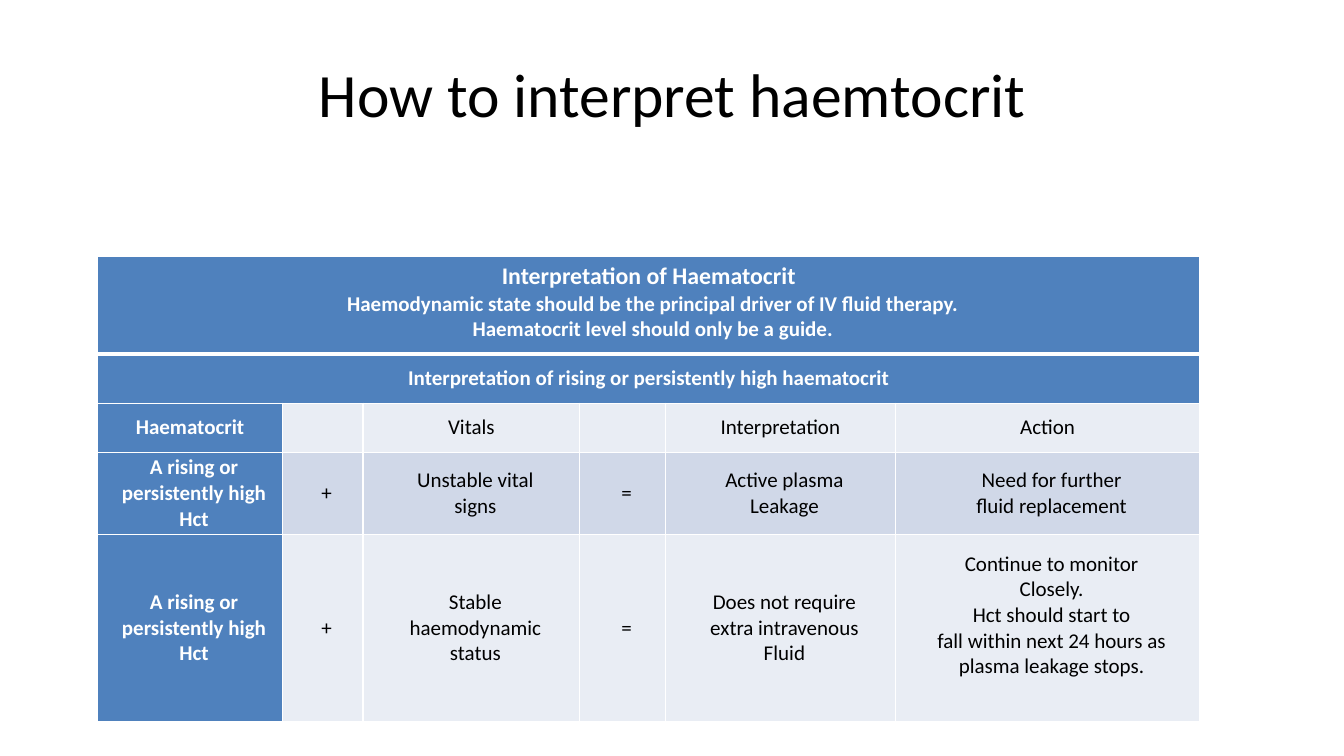
from lxml import etree
from pptx import Presentation
from pptx import util as u
from pptx.dml.color import RGBColor
from pptx.enum import text
from pptx.oxml.ns import qn

COLORS = {
    "white": "FFFFFF",
    "black": "000000",
    "blue": "4F81BD",
    "pale": "E9EDF4",
    "band": "D0D8E8",
}
COLUMN_WIDTHS = [1.83, 0.8, 2.15, 0.85, 2.28, 3.02]
ROW_HEIGHTS = [0.97, 0.49, 0.49, 0.81, 1.86]
BANNER_LINES = [
    "Interpretation of Haematocrit",
    "Haemodynamic state should be the principal driver of IV fluid therapy.",
    "Haematocrit level should only be a guide.",
]
SECTION_LINE = "Interpretation of rising or persistently high haematocrit"
RISING_HCT = ["A rising or", "persistently high Hct"]
BODY_ROWS = [
    [["Haematocrit"], [], ["Vitals"], [], ["Interpretation"], ["Action"]],
    [RISING_HCT, ["+"], ["Unstable vital", "signs"], ["="],
     ["Active plasma", "Leakage"], ["Need for further", "fluid replacement"]],
    [RISING_HCT, ["+"], ["Stable", "haemodynamic", "status"], ["="],
     ["Does not require", "extra intravenous", "Fluid"],
     ["Continue to monitor", "Closely.", "Hct should start to",
      "fall within next 24 hours as plasma leakage stops."]],
]
BANNER_FORMAT = {
    "margin_left": u.Inches(0.11), "margin_right": u.Inches(0.11),
    "margin_top": u.Inches(0.06), "margin_bottom": u.Inches(0.06),
}
BODY_FORMAT = {
    "margin_left": u.Inches(0.12), "margin_right": u.Inches(0.12),
    "margin_top": 0, "margin_bottom": 0,
    "vertical_anchor": text.MSO_ANCHOR.MIDDLE,
}


def apply_format(target, values):
    for name, value in values.items():
        setattr(target, name, value)


def write_line(paragraph, line, size, color, bold=False, indent=0):
    paragraph.alignment = text.PP_ALIGN.CENTER
    properties = paragraph._p.get_or_add_pPr()
    properties.set("marL", str(u.Inches(indent)))
    properties.set("indent", "0")
    run = paragraph.add_run()
    run.text = line
    apply_format(run.font, {"name": "Calibri", "size": u.Pt(size), "bold": bold})
    run.font.color.rgb = RGBColor.from_string(COLORS[color])


def write_cell(cell, lines, sizes, color, bold, indents):
    for index, (line, size, indent) in enumerate(zip(lines, sizes, indents)):
        frame = cell.text_frame
        paragraph = frame.add_paragraph() if index else frame.paragraphs[0]
        write_line(paragraph, line, size, color, bold, indent)


def style_cell(cell, fill, top=1, bottom=1):
    cell.fill.solid()
    cell.fill.fore_color.rgb = RGBColor.from_string(COLORS[fill])
    properties = cell._tc.get_or_add_tcPr()
    edges = {"a:lnL": 1, "a:lnR": 1, "a:lnT": top, "a:lnB": bottom}
    for position, (edge, width) in enumerate(edges.items()):
        border = etree.Element(qn(edge), w=str(u.Pt(width)))
        solid = etree.SubElement(border, qn("a:solidFill"))
        etree.SubElement(solid, qn("a:srgbClr"), val=COLORS["white"])
        properties.insert(position, border)


def add_title(slide, wording):
    title = slide.shapes.title
    apply_format(title, {
        "left": u.Inches(0.67), "top": u.Inches(0.3),
        "width": u.Inches(12), "height": u.Inches(1.25),
    })
    title.text_frame.vertical_anchor = text.MSO_ANCHOR.MIDDLE
    write_line(title.text_frame.paragraphs[0], wording, 44, "black")


def add_grid(slide):
    grid = slide.shapes.add_table(
        len(ROW_HEIGHTS), len(COLUMN_WIDTHS), u.Inches(0.97), u.Inches(2.54),
        u.Inches(sum(COLUMN_WIDTHS)), u.Inches(sum(ROW_HEIGHTS))).table
    for column, width in zip(grid.columns, COLUMN_WIDTHS):
        column.width = u.Inches(width)
    for row, height in zip(grid.rows, ROW_HEIGHTS):
        row.height = u.Inches(height)
    return grid


def fill_banners(grid):
    last = len(COLUMN_WIDTHS) - 1
    for row, (top, bottom) in enumerate([(1, 3), (3, 1)]):
        for column in range(last + 1):
            style_cell(grid.cell(row, column), "blue", top, bottom)
        grid.cell(row, 0).merge(grid.cell(row, last))
        apply_format(grid.cell(row, 0), BANNER_FORMAT)
    write_cell(grid.cell(0, 0), BANNER_LINES, [17, 15, 15], "white", True,
               [0, 0.08, 0.08])
    section = grid.cell(1, 0)
    section.vertical_anchor = text.MSO_ANCHOR.MIDDLE
    write_cell(section, [SECTION_LINE], [15], "white", True, [0])


def fill_body(grid):
    for row, entries in enumerate(BODY_ROWS):
        indent = 0.08 if row else 0
        for column, lines in enumerate(entries):
            cell = grid.cell(row + 2, column)
            heading = column == 0
            shade = "band" if row % 2 else "pale"
            style_cell(cell, "blue" if heading else shade)
            apply_format(cell, BODY_FORMAT)
            write_cell(cell, lines, [15] * len(lines),
                       "white" if heading else "black", heading,
                       [indent] * len(lines))
    monitoring = grid.cell(len(ROW_HEIGHTS) - 1, len(COLUMN_WIDTHS) - 1)
    monitoring.margin_bottom = u.Inches(0.25)


def main():
    deck = Presentation()
    deck.slide_width = u.Inches(13.33)
    deck.slide_height = u.Inches(7.5)
    slide = deck.slides.add_slide(deck.slide_layouts[5])
    add_title(slide, "How to interpret haemtocrit")
    grid = add_grid(slide)
    fill_banners(grid)
    fill_body(grid)
    deck.save("out.pptx")


if __name__ == "__main__":
    main()
